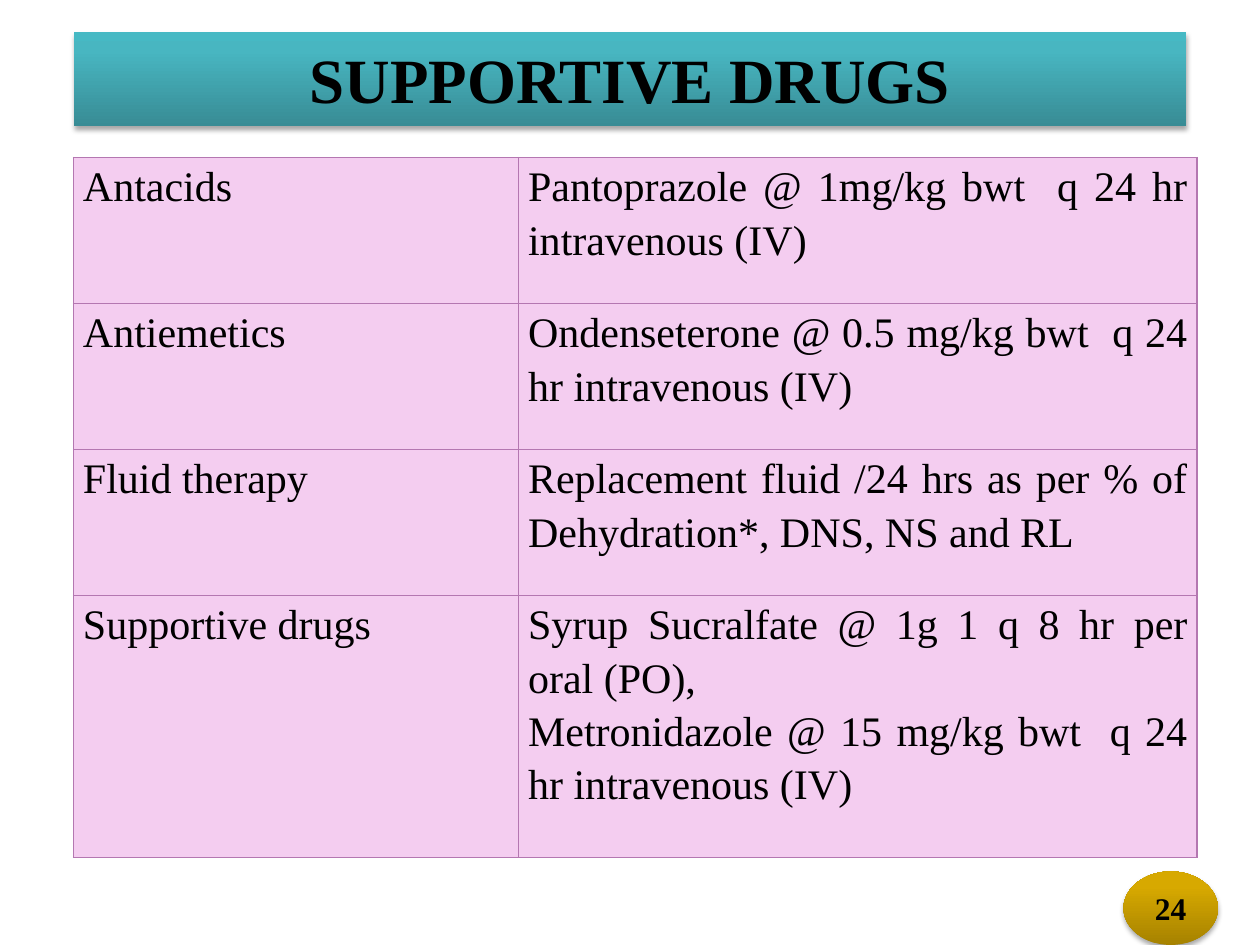
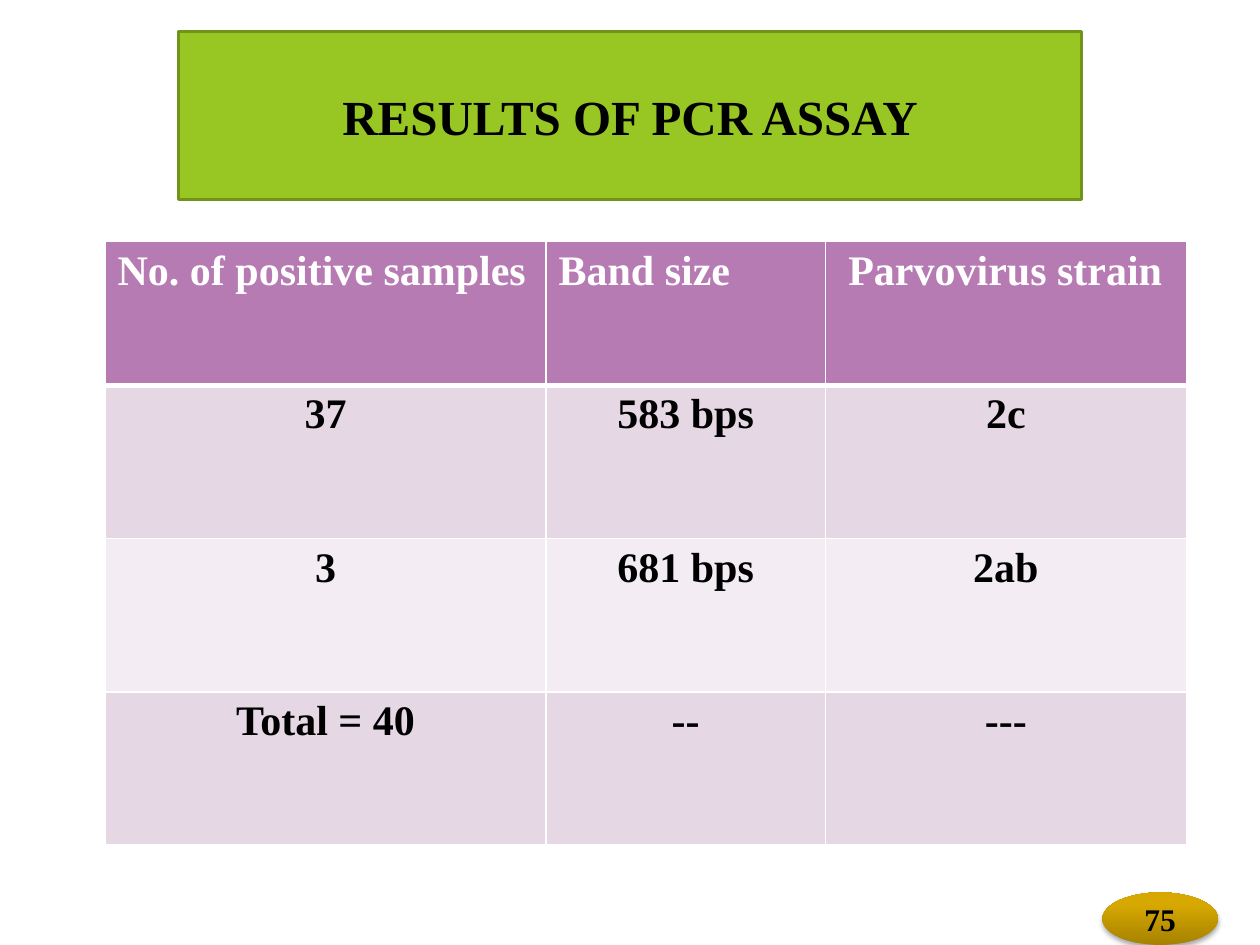
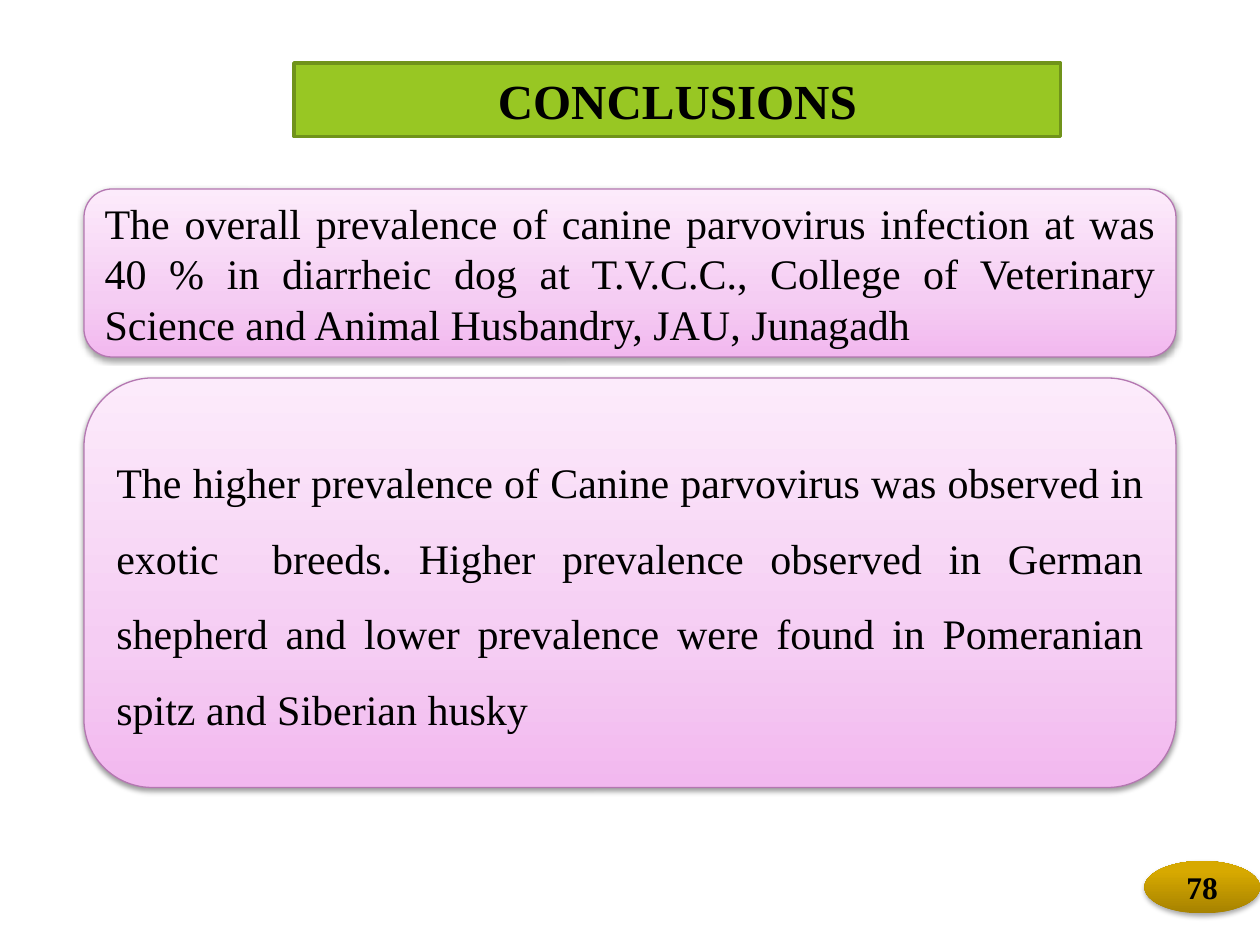
from lxml.etree import SubElement as Sub
from pptx import Presentation
from pptx.dml.color import RGBColor as Rgb
from pptx.enum.shapes import MSO_SHAPE as Kind
from pptx.enum.text import MSO_ANCHOR as Anchor, MSO_AUTO_SIZE as Fit, PP_ALIGN as Align
from pptx.oxml.ns import qn
from pptx.util import Pt

PX = 7620  # 120 px to the inch
FONT = "Times New Roman"
HEX = {
    "ink": "000000", "white": "FFFFFF",
    "lime": "98C723", "moss": "70931A",
    "plum": "B477B1", "pink": "F4CDF0",
    "head": "B77BB4", "odd": "E6D7E5", "even": "F3ECF2",
}
GRADS = {
    "teal": [(0, "388C95"), (80, "48B6C1"), (100, "46B9C4")],
    "gold": [(0, "A68200"), (80, "D7A900"), (100, "D8A900")],
    "rose": [(0, "F2B8EF"), (35, "F5CDF3"), (100, "FCEBFB")],
}


def px(*nums):
    return [n * PX for n in nums]


def rgb(name):
    return Rgb.from_string(HEX[name])


def write(frame, text, size=24, bold=False, color="ink", align=Align.CENTER, space=None):
    """Fill a text frame, one paragraph per line of text."""
    frame.text = text
    for par in frame.paragraphs:
        par.alignment = align
        if space:
            par.line_spacing = space
        for run in par.runs:
            font = run.font
            font.name, font.size, font.bold = FONT, Pt(size), bold
            font.color.rgb = rgb(color)


def shade(shape, name):
    """Fill with a named gradient that runs from bottom to top."""
    shape.fill.gradient()
    shape.fill.gradient_angle = 90
    stops = shape.element.spPr.find(".//" + qn("a:gsLst"))
    for old in list(stops):
        stops.remove(old)
    for pos, tone in GRADS[name]:
        stop = Sub(stops, qn("a:gs"), pos=str(pos * 1000))
        Sub(stop, qn("a:srgbClr"), val=tone)


def drop(shape, alpha, dist):
    """Cast a soft shadow straight down."""
    fx = shape.element.spPr.find(qn("a:effectLst"))
    cast = Sub(fx, qn("a:outerShdw"), blurRad=str(Pt(3.1)), dist=str(Pt(dist)),
               dir="5400000", rotWithShape="0")
    tone = Sub(cast, qn("a:srgbClr"), val=HEX["ink"])
    Sub(tone, qn("a:alpha"), val=str(alpha * 1000))


def edge(cell, color, width, base):
    """Draw the four borders of a cell; base is the width of the lower one."""
    props = cell._tc.get_or_add_tcPr()
    for side in "LRTB":
        wide = base if side == "B" else width
        line = Sub(props, qn("a:ln" + side), w=str(Pt(wide)))
        Sub(Sub(line, qn("a:solidFill")), qn("a:srgbClr"), val=HEX[color])


class Deck:
    def __init__(self):
        self.prs = Presentation()
        self.prs.slide_width, self.prs.slide_height = px(1200, 900)
        self.slide = None

    def page(self):
        self.slide = self.prs.slides.add_slide(self.prs.slide_layouts[5])

    def paint(self, shape, fill, line=None, width=0.75, alpha=0, dist=1.8):
        if fill in GRADS:
            shade(shape, fill)
        else:
            shape.fill.solid()
            shape.fill.fore_color.rgb = rgb(fill)
        if line:
            shape.line.color.rgb = rgb(line)
            shape.line.width = Pt(width)
        else:
            shape.line.fill.background()
        shape.shadow.inherit = False
        if alpha:
            drop(shape, alpha, dist)
        frame = shape.text_frame
        frame.word_wrap = True
        frame.auto_size = Fit.NONE
        frame.vertical_anchor = Anchor.MIDDLE

    def title(self, text, box, size=28, form="roundRect", **look):
        shape = self.slide.shapes.title
        shape.left, shape.top, shape.width, shape.height = px(*box)
        geom = Sub(shape.element.spPr, qn("a:prstGeom"), prst=form)
        Sub(geom, qn("a:avLst"))
        look = look or {"fill": "lime", "line": "moss", "width": 2}
        self.paint(shape, **look)
        write(shape.text_frame, text, size=size, bold=True)

    def panel(self, text, box, space=None):
        shape = self.slide.shapes.add_shape(Kind.ROUNDED_RECTANGLE, *px(*box))
        self.paint(shape, "rose", line="plum", alpha=38, dist=1.6)
        write(shape.text_frame, text, align=Align.JUSTIFY, space=space)

    def badge(self, num, box):
        shape = self.slide.shapes.add_shape(Kind.OVAL, *px(*box))
        self.paint(shape, "gold", alpha=35)
        write(shape.text_frame, str(num), size=18, bold=True)

    def table(self, data, spot, cols, rows, style):
        """Build a table; style(cell, text, row) dresses each cell."""
        size = (sum(cols), sum(rows))
        table = self.slide.shapes.add_table(
            len(rows), len(cols), *px(*spot, *size)).table
        table.first_row = table.horz_banding = False
        for col, wide in zip(table.columns, px(*cols)):
            col.width = wide
        for r, (row, high) in enumerate(zip(table.rows, px(*rows))):
            row.height = high
            for cell, text in zip(row.cells, data[r]):
                style(cell, text, r)


def drug(cell, text, row):
    cell.margin_left, cell.margin_right = px(9, 9)
    cell.margin_top = cell.margin_bottom = 0
    edge(cell, "plum", 0.75, 0.75)
    cell.fill.solid()
    cell.fill.fore_color.rgb = rgb("pink")
    write(cell.text_frame, text, align=Align.JUSTIFY, space=1.15)


def assay(cell, text, row):
    top = row == 0
    edge(cell, "white", 1, 3 if top else 1)
    cell.fill.solid()
    cell.fill.fore_color.rgb = rgb("head" if top else "odd" if row % 2 else "even")
    write(cell.text_frame, text, bold=True, color="white" if top else "ink",
          align=Align.LEFT if top else Align.CENTER)


DRUGS = [
    ("Antacids", "Pantoprazole @ 1mg/kg bwt  q 24 hr intravenous (IV)"),
    ("Antiemetics", "Ondenseterone @ 0.5 mg/kg bwt  q 24 hr intravenous (IV)"),
    ("Fluid therapy", "Replacement fluid /24 hrs as per % of Dehydration*, DNS, NS and RL"),
    ("Supportive drugs", "Syrup Sucralfate @ 1g 1 q 8 hr per oral (PO),\n"
     "Metronidazole @ 15 mg/kg bwt  q 24 hr intravenous (IV)"),
]
BANDS = [
    ("No. of positive samples", "Band size", " Parvovirus strain"),
    ("37", "583 bps", "2c"),
    ("3", "681 bps", "2ab"),
    ("Total = 40", "--", "---"),
]


def main():
    deck = Deck()

    deck.page()
    deck.table(DRUGS, (70, 150), (424, 646), (139, 139, 139, 250), drug)
    deck.title("SUPPORTIVE DRUGS", (70, 30, 1060, 90), size=36, form="rect",
               fill="teal", alpha=35)
    deck.badge(24, (1070, 830, 90, 70))

    deck.page()
    deck.table(BANDS, (100, 230), (420, 266, 344), (137, 146, 146, 146), assay)
    deck.title("RESULTS OF PCR ASSAY", (170, 30, 860, 160))
    deck.badge(75, (1050, 850, 110, 50))

    deck.page()
    deck.panel("The overall prevalence of canine parvovirus infection at was 40 % in "
               "diarrheic dog at T.V.C.C., College of Veterinary Science and Animal "
               "Husbandry, JAU, Junagadh", (80, 180, 1040, 160))
    deck.panel("The higher prevalence of Canine parvovirus was observed in exotic  breeds. "
               "Higher prevalence observed in German shepherd and lower prevalence were "
               "found in Pomeranian spitz and Siberian husky", (80, 360, 1040, 390), space=1.5)
    deck.title("CONCLUSIONS", (280, 60, 730, 70))
    deck.badge(78, (1090, 820, 110, 50))

    deck.prs.save("out.pptx")


if __name__ == "__main__":
    main()
